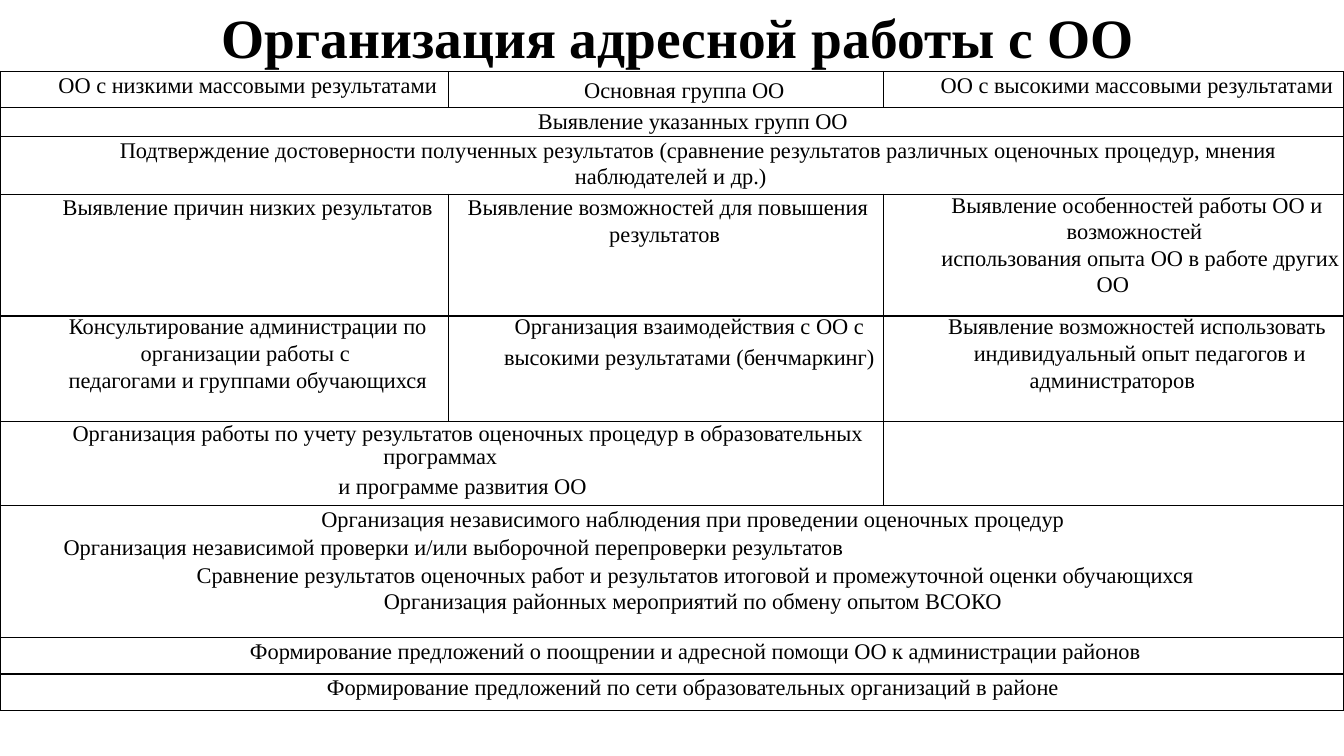
from dataclasses import dataclass

import lxml.etree
import pptx
import pptx.dml.color
import pptx.enum.text
import pptx.oxml
import pptx.oxml.ns
import pptx.util
from pptx.util import Inches

BLACK = pptx.dml.color.RGBColor(0x00, 0x00, 0x00)
CENTER = pptx.enum.text.PP_ALIGN.CENTER
LEFT = pptx.enum.text.PP_ALIGN.LEFT
TOP = pptx.enum.text.MSO_ANCHOR.TOP
MIDDLE = pptx.enum.text.MSO_ANCHOR.MIDDLE
FONT_NAME = "Times New Roman"
TITLE_SIZE, CELL_SIZE = 39.6, 16
NARROW_INDENT = 0.44

COLUMN_WIDTHS = [4.45, 4.31, 4.57]
CELL_FORMAT = {
    "margin_left": Inches(0.05),
    "margin_right": Inches(0.02),
    "margin_top": 0,
    "margin_bottom": 0,
    "vertical_anchor": TOP,
}
PLAIN_TABLE = {"first_row": False, "horz_banding": False}


@dataclass
class Line:
    """One paragraph; margin and indent in inches, after in points."""
    text: str
    spacing: float = 1.07
    after: float = 0
    indent: float = 0.49
    margin: float = 0
    alignment: object = CENTER
    size: float = CELL_SIZE
    bold: bool = False


@dataclass
class Cell:
    lines: list
    span: int = 1
    anchor: object = TOP


def single(text, span=1, anchor=TOP, **line_format):
    return Cell([Line(text, **line_format)], span, anchor)


# Each row: height in inches, then its cells from left to right.
ROWS = [
    (0.36, [
        single("ОО с низкими массовыми результатами "),
        single("Основная группа ОО ", anchor=MIDDLE, indent=0.39),
        single("ОО с высокими массовыми результатами "),
    ]),
    (0.18, [single("Выявление указанных групп ОО ", 3, indent=NARROW_INDENT)]),
    (0.37, [single("Подтверждение достоверности полученных результатов (сравнение результатов "
                   "различных оценочных процедур, мнения наблюдателей и др.) ", 3)]),
    (1.21, [
        single("Выявление причин низких результатов "),
        single("Выявление возможностей для повышения результатов ", indent=0.01),
        Cell([
            Line("Выявление особенностей работы ОО и ", 0.96),
            Line("возможностей ", indent=NARROW_INDENT),
            Line("использования опыта ОО в работе других ОО ", margin=0.01),
        ]),
    ]),
    (1.05, [
        Cell([
            Line("Консультирование администрации по ", 0.95, 0.1),
            Line("организации работы с ", indent=NARROW_INDENT),
            Line("педагогами и группами обучающихся "),
        ]),
        Cell([
            Line("Организация взаимодействия с ОО с ", 0.95, 2.6),
            Line("высокими результатами (бенчмаркинг) "),
        ]),
        Cell([
            Line("Выявление возможностей использовать ", 0.95, 0.1),
            Line("индивидуальный опыт педагогов и администраторов "),
        ]),
    ]),
    (0.54, [
        Cell([
            Line("Организация работы по учету результатов оценочных процедур "
                 "в образовательных программах ", 0.96, 2.5),
            Line("и программе развития ОО ", indent=NARROW_INDENT),
        ], 2),
        Cell([]),
    ]),
    (1.31, [Cell([
        Line("Организация независимого наблюдения при проведении оценочных процедур ",
             after=0.8, indent=NARROW_INDENT),
        Line("Организация независимой проверки и/или выборочной перепроверки результатов",
             margin=0.09, alignment=LEFT),
        Line("Сравнение результатов оценочных работ и результатов итоговой "
             "и промежуточной оценки обучающихся ", 1.13),
        Line("Организация районных мероприятий по обмену опытом ВСОКО ", indent=NARROW_INDENT),
    ], 3)]),
    (0.36, [single("Формирование предложений о поощрении и адресной помощи ОО "
                   "к администрации районов ", 3)]),
    (0.36, [single("Формирование предложений по сети образовательных организаций в районе ", 3,
                   indent=NARROW_INDENT)]),
]


def set_attributes(target, values):
    for name, value in values.items():
        setattr(target, name, value)


def set_end_size(paragraph, size):
    """Size the paragraph mark, which sets the height of an empty cell."""
    mark = lxml.etree.SubElement(paragraph._p, pptx.oxml.ns.qn("a:endParaRPr"))
    mark.set("sz", str(round(size * 100)))


def write_lines(text_frame, lines):
    for index, line in enumerate(lines):
        paragraph = text_frame.add_paragraph() if index else text_frame.paragraphs[0]
        set_attributes(paragraph, {
            "alignment": line.alignment,
            "line_spacing": line.spacing,
            "space_before": 0,
            "space_after": pptx.util.Pt(line.after),
        })
        properties = paragraph._p.get_or_add_pPr()
        properties.set("marL", str(Inches(line.margin)))
        properties.set("indent", str(Inches(line.indent)))
        run = paragraph.add_run()
        run.text = line.text
        set_attributes(run.font, {
            "name": FONT_NAME, "size": pptx.util.Pt(line.size), "bold": line.bold,
        })
        run.font.color.rgb = BLACK
        set_end_size(paragraph, line.size)


def format_cell(cell):
    """Give the cell thin black borders, no fill and tight margins."""
    properties = cell._tc.get_or_add_tcPr()
    for side in ("lnL", "lnR", "lnT", "lnB"):
        properties.append(pptx.oxml.parse_xml(
            f'<a:{side} {pptx.oxml.ns.nsdecls("a")} w="{pptx.util.Pt(1)}">'
            f'<a:solidFill><a:srgbClr val="{BLACK}"/></a:solidFill></a:{side}>'))
    cell.fill.background()
    set_attributes(cell, CELL_FORMAT)


def add_title(slide, left, top, width, height):
    text_frame = slide.shapes.add_textbox(left, top, width, height).text_frame
    set_attributes(text_frame, {"word_wrap": True, "vertical_anchor": MIDDLE})
    write_lines(text_frame, [Line("Организация адресной работы с ОО ", 0.9,
                                  indent=0, size=TITLE_SIZE, bold=True)])


def add_work_table(slide, left, top, width, height):
    table = slide.shapes.add_table(
        len(ROWS), len(COLUMN_WIDTHS), left, top, width, height).table
    set_attributes(table, PLAIN_TABLE)
    for column, column_width in zip(table.columns, COLUMN_WIDTHS):
        column.width = Inches(column_width)
    for cell in table.iter_cells():
        format_cell(cell)
    for row_index, (row_height, cells) in enumerate(ROWS):
        table.rows[row_index].height = Inches(row_height)
        column_index = 0
        for content in cells:
            cell = table.cell(row_index, column_index)
            column_index += content.span
            if content.span > 1:
                cell.merge(table.cell(row_index, column_index - 1))
            cell.vertical_anchor = content.anchor
            write_lines(cell.text_frame, content.lines)
    for cell in table.iter_cells():
        if not cell.text_frame.text:
            set_end_size(cell.text_frame.paragraphs[0], CELL_SIZE)


def main():
    presentation = pptx.Presentation()
    set_attributes(presentation, {"slide_width": Inches(13.33), "slide_height": Inches(7.5)})
    slide = presentation.slides.add_slide(presentation.slide_layouts[6])
    add_title(slide, Inches(1.04), Inches(0.1), Inches(11.5), Inches(0.61))
    add_work_table(slide, 0, Inches(0.71), presentation.slide_width,
                   Inches(sum(height for height, _ in ROWS)))
    presentation.save("out.pptx")


if __name__ == "__main__":
    main()
